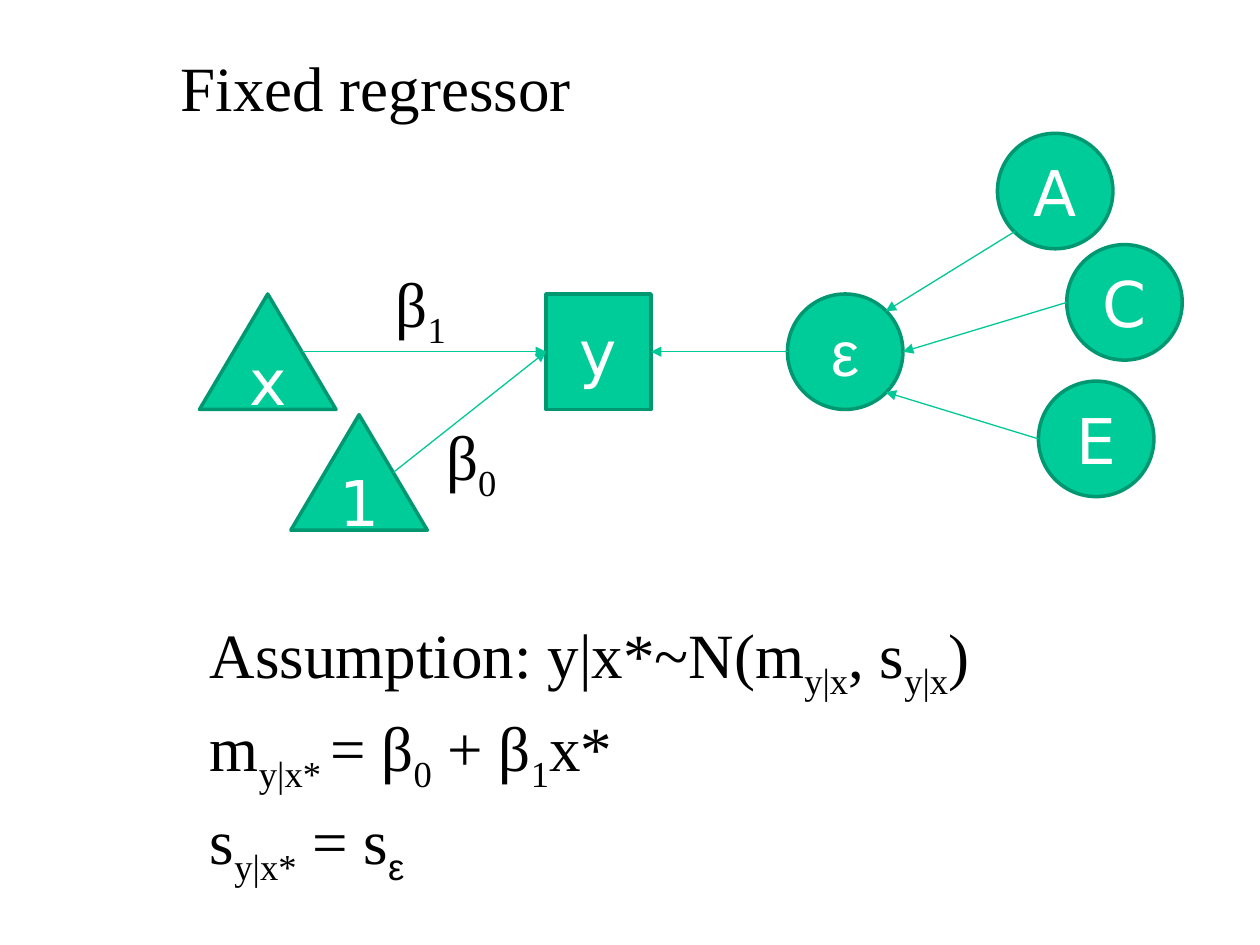
from dataclasses import dataclass

from lxml import etree
from pptx import Presentation, util as u
from pptx.dml.color import RGBColor
from pptx.enum import shapes, text
from pptx.oxml.ns import qn

COLORS = {"fill": "00CC99", "outline": "009771", "arrow": "00C896",
          "ink": "000000", "letter": "FFFFFF"}
SERIF, SANS, GREEK = "Times New Roman", "DejaVu Sans", "Arial"
SIZE = u.Pt(36)
CELL = u.Inches(1) // 12  # the grid has 120 columns and 90 rows

KINDS = {  # preset shape, width in columns
    "fixed": (shapes.MSO_SHAPE.ISOSCELES_TRIANGLE, 13),
    "observed": (shapes.MSO_SHAPE.RECTANGLE, 10),
    "latent": (shapes.MSO_SHAPE.OVAL, 11),
}
NODE_ROWS = 11

# Points on a node's outline, as shares of its width and height
LEFT, RIGHT, SLOPE = (0, 0.5), (1, 0.5), (0.75, 0.5)
UPPER_RIGHT, LOWER_RIGHT, LOWER_LEFT = (0.85, 0.15), (0.85, 0.85), (0.15, 0.85)
SITES = {LEFT: 1, RIGHT: 3}  # connection sites of a rectangle


@dataclass
class Node:
    label: str
    kind: str
    column: float
    row: float

    def point(self, share: tuple) -> tuple:
        width = KINDS[self.kind][1]
        return (grid(self.column + share[0] * width),
                grid(self.row + share[1] * NODE_ROWS))


@dataclass
class Arrow:
    source: str
    start: tuple
    target: str
    end: tuple


@dataclass
class Label:
    words: str
    column: float
    row: float


NODES = {node.label: node for node in (
    Node("x", "fixed", 19, 28),
    Node("1", "fixed", 27.7, 39.5),
    Node("y", "observed", 52, 28),
    Node("ε", "latent", 75, 28),
    Node("A", "latent", 95, 12.7),
    Node("C", "latent", 101.6, 23.3),
    Node("E", "latent", 98.9, 36.3),
)}
ARROWS = (
    Arrow("x", SLOPE, "y", LEFT),
    Arrow("1", SLOPE, "y", LEFT),
    Arrow("ε", LEFT, "y", RIGHT),
    Arrow("A", LOWER_LEFT, "ε", UPPER_RIGHT),
    Arrow("C", LEFT, "ε", RIGHT),
    Arrow("E", LEFT, "ε", LOWER_RIGHT),
)
LABELS = (Label("β_1", 36.5, 24.6), Label("β_0", 41.3, 39.2))
# Underscores switch subscript on and off
ASSUMPTIONS = (
    "Assumption: y|x*~N(m_y|x_, s_y|x_)",
    "m_y|x* _= β_0_ + β_1_x*",
    "s_y|x*_ = s_ε",
)


def grid(cells: float) -> int:
    return round(cells * CELL)


def color(name: str) -> RGBColor:
    return RGBColor.from_string(COLORS[name])


def place(box, column: float, row: float, columns: float, rows: float) -> None:
    box.left, box.top = grid(column), grid(row)
    box.width, box.height = grid(columns), grid(rows)


def write(box, lines: tuple) -> None:
    """Fill a box with left-aligned serif lines that may hold subscripts."""
    frame = box.text_frame
    frame.word_wrap = False
    frame.auto_size = text.MSO_AUTO_SIZE.SHAPE_TO_FIT_TEXT
    frame.vertical_anchor = text.MSO_ANCHOR.TOP
    for number, line in enumerate(lines):
        para = frame.paragraphs[0] if number == 0 else frame.add_paragraph()
        para.alignment = text.PP_ALIGN.LEFT
        para.space_before = u.Pt(4)
        para.font.size, para.font.name = SIZE, SERIF
        para.font.color.rgb = color("ink")
        properties = para._p.get_or_add_pPr()
        properties.set("marL", "0")
        properties.set("indent", "0")
        properties.insert_element_before(
            properties.makeelement(qn("a:buNone"), {}), "a:tabLst", "a:defRPr")
        for index, part in enumerate(line.split("_")):
            span = para.add_run()
            span.text = part
            span.font.size, span.font.name = SIZE, SERIF
            span.font.color.rgb = color("ink")
            if index % 2:
                span.font._element.set("baseline", "-25000")
            if part == "ε":
                span.font.name = GREEK


def draw_node(page, node: Node):
    preset, columns = KINDS[node.kind]
    shape = page.shapes.add_shape(preset, *node.point((0, 0)),
                                  grid(columns), grid(NODE_ROWS))
    shape.shadow.inherit = False
    shape.fill.solid()
    shape.fill.fore_color.rgb = color("fill")
    shape.line.color.rgb = color("outline")
    shape.line.width = u.Pt(2)
    shape.text_frame.vertical_anchor = text.MSO_ANCHOR.MIDDLE
    para = shape.text_frame.paragraphs[0]
    para.alignment = text.PP_ALIGN.CENTER
    span = para.add_run()
    span.text = node.label
    span.font.size = SIZE
    span.font.name = GREEK if node.label == "ε" else SANS
    span.font.color.rgb = color("letter")
    return shape


def draw_arrow(page, arrow: Arrow, drawn: dict) -> None:
    target = NODES[arrow.target]
    line = page.shapes.add_connector(
        shapes.MSO_CONNECTOR.STRAIGHT,
        *NODES[arrow.source].point(arrow.start), *target.point(arrow.end))
    if target.kind == "observed":
        line.end_connect(drawn[arrow.target], SITES[arrow.end])
    line.line.color.rgb = color("arrow")
    line.line.width = u.Pt(0.75)
    etree.SubElement(line.line._get_or_add_ln(), qn("a:tailEnd"), type="triangle")
    etree.SubElement(line._element.spPr, qn("a:effectLst"))


def main() -> None:
    deck = Presentation()
    deck.slide_width, deck.slide_height = grid(120), grid(90)
    page = deck.slides.add_slide(deck.slide_layouts[1])

    # Title and assumptions
    title, body = page.shapes.title, page.placeholders[1]
    place(title, 16, 4, 40, 8.5)
    write(title, ("Fixed regressor",))
    place(body, 18.8, 58, 76.7, 37.5)
    write(body, ASSUMPTIONS)

    # Path diagram
    drawn = {name: draw_node(page, node) for name, node in NODES.items()}
    for arrow in ARROWS:
        draw_arrow(page, arrow, drawn)
    for label in LABELS:
        box = page.shapes.add_textbox(0, 0, 0, 0)
        place(box, label.column, label.row, 7.5, 8.5)
        write(box, (label.words,))

    deck.save("out.pptx")


if __name__ == "__main__":
    main()
